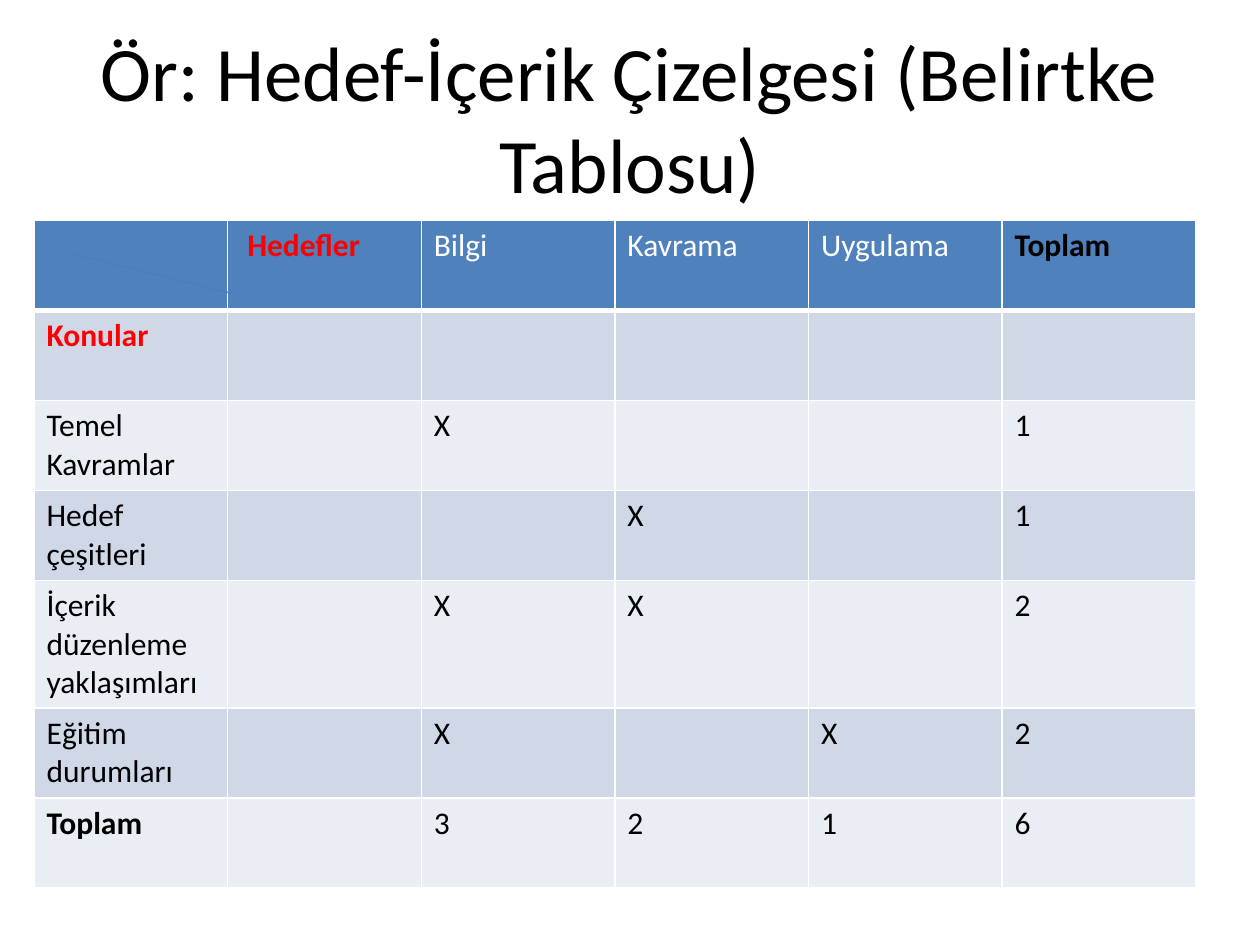
import pptx
import pptx.util
import pptx.dml.color
import pptx.enum.shapes
import pptx.enum.text
import pptx.oxml
import pptx.oxml.ns
import lxml.etree

Inches, Pt = pptx.util.Inches, pptx.util.Pt
FONT = "Calibri"
COLORS = {"header": "4F81BD", "odd": "D0D8E8", "even": "E9EDF4", "white": "FFFFFF",
          "text": "000000", "accent": "FF0000", "line": "4B7EBC"}

TITLE = "Ör: Hedef-İçerik Çizelgesi (Belirtke Tablosu)"
ROWS = [
    ["", " Hedefler", "Bilgi", "Kavrama", "Uygulama", "Toplam"],
    ["Konular", "", "", "", "", ""],
    ["Temel Kavramlar", "", "X", "", "", "1"],
    ["Hedef çeşitleri", "", "", "X", "", "1"],
    ["İçerik düzenleme yaklaşımları", "", "X", "X", "", "2"],
    ["Eğitim durumları", "", "X", "", "X", "2"],
    ["Toplam", "", "3", "2", "1", "6"],
]
EMPHASIS = {" Hedefler": "accent", "Konular": "accent", "Toplam": "text"}
LEFT, TOP, COL_W, ROW_H = 0.27, 1.75, 1.537, 0.714


def rgb(name):
    return pptx.dml.color.RGBColor.from_string(COLORS[name])


def add_run(p, text, size, color, bold=False):
    r = p.add_run()
    r.text = text
    r.font.name = FONT
    r.font.size = Pt(size)
    r.font.bold = bold
    r.font.color.rgb = rgb(color)


def set_borders(cell, widths):
    tcPr = cell._tc.get_or_add_tcPr()
    for i, (side, width) in enumerate(widths.items()):
        ln = lxml.etree.Element(pptx.oxml.ns.qn(f"a:ln{side}"), w=str(Pt(width)))
        fill = lxml.etree.SubElement(ln, pptx.oxml.ns.qn("a:solidFill"))
        lxml.etree.SubElement(fill, pptx.oxml.ns.qn("a:srgbClr"), val=COLORS["white"])
        tcPr.insert(i, ln)


def add_title(s):
    sp = s.shapes.title
    sp.left, sp.top, sp.width, sp.height = map(Inches, (0.5, 0.3, 9, 1.25))
    tf = sp.text_frame
    tf.word_wrap = True
    tf.vertical_anchor = pptx.enum.text.MSO_ANCHOR.MIDDLE
    p = tf.paragraphs[0]
    p.alignment = pptx.enum.text.PP_ALIGN.CENTER
    add_run(p, TITLE, 44, "text")


def add_goal_table(s):
    n_rows, n_cols = len(ROWS), len(ROWS[0])
    table = s.shapes.add_table(n_rows, n_cols, Inches(LEFT), Inches(TOP),
                               Inches(COL_W * n_cols), Inches(ROW_H * n_rows)).table
    for col in table.columns:
        col.width = Inches(COL_W)
    for i, row in enumerate(ROWS):
        table.rows[i].height = Inches(ROW_H)
        band = "header" if i == 0 else ("odd" if i % 2 else "even")
        for j, text in enumerate(row):
            cell = table.cell(i, j)
            cell.fill.solid()
            cell.fill.fore_color.rgb = rgb(band)
            set_borders(cell, {"L": 1, "R": 1, "T": 3 if i == 1 else 1, "B": 3 if i == 0 else 1})
            if text:
                color = EMPHASIS.get(text, "white" if i == 0 else "text")
                add_run(cell.text_frame.paragraphs[0], text, 18, color, text in EMPHASIS)


def add_diagonal(s):
    line = s.shapes.add_connector(pptx.enum.shapes.MSO_CONNECTOR.STRAIGHT,
                                  Inches(0.59), Inches(2.02), Inches(1.85), Inches(2.33))
    line.line.color.rgb = rgb("line")
    line.line.width = Pt(0.75)
    lxml.etree.SubElement(line._element.spPr, pptx.oxml.ns.qn("a:effectLst"))


def main():
    prs = pptx.Presentation()
    prs.slide_width, prs.slide_height = Inches(10), Inches(7.5)
    s = prs.slides.add_slide(prs.slide_layouts[5])
    add_title(s)
    add_goal_table(s)
    add_diagonal(s)
    prs.save("out.pptx")


if __name__ == "__main__":
    main()
